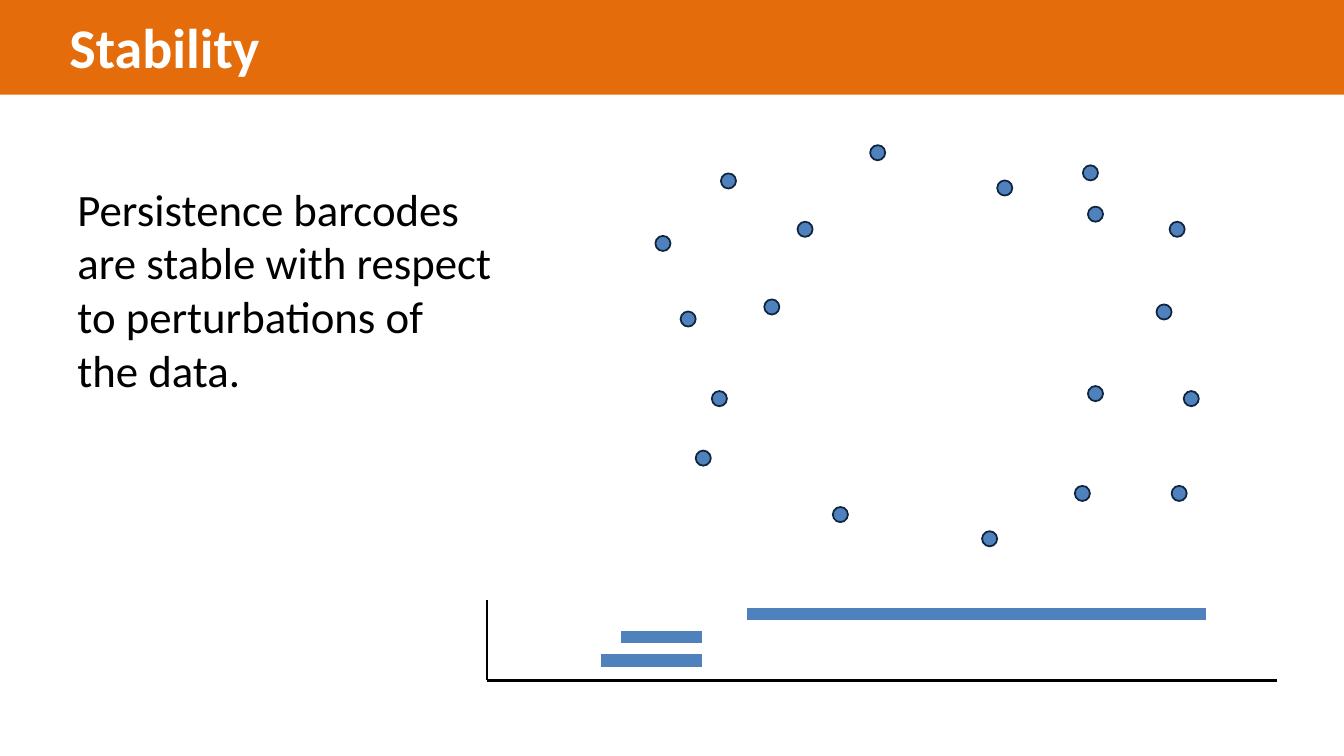
from pptx import Presentation
from pptx import util as u
from pptx.dml.color import RGBColor
from pptx.enum import shapes, text
from pptx.oxml.ns import qn
from lxml import etree

WHITE = RGBColor(0xFF, 0xFF, 0xFF)
BLACK = RGBColor(0x00, 0x00, 0x00)
ORANGE = RGBColor(0xE4, 0x6C, 0x0A)
BLUE = RGBColor(0x4F, 0x81, 0xBD)
NAVY = RGBColor(0x0F, 0x24, 0x3E)

POINT_SIZE = 15
POINTS = [
    (650, 234), (791, 220), (863, 144), (989, 179), (1074, 164),
    (1174, 388), (1066, 482), (974, 527), (826, 503), (690, 447),
    (675, 309), (1079, 383), (706, 388), (1147, 302), (1079, 205),
    (1162, 482), (758, 297), (715, 172), (1160, 220),
]
# Barcode intervals: start, end, row counted upwards from the axis
BARS = [(596, 696, 0), (616, 696, 1), (741, 768, 2), (766, 968, 2), (967, 1196, 2)]
BAR_BASE, BAR_STEP = 655, 23
AXIS_LEFT, AXIS_RIGHT, AXIS_TOP, AXIS_BOTTOM = 483, 1267, 595, 675


def px(n):
    """Convert px to EMU at 100 px to the inch."""
    return u.Emu(n * 9144)


class SlideBuilder:
    font = "Calibri"

    def __init__(self, prs):
        self.s = prs.slides.add_slide(prs.slide_layouts[6])

    def shape(self, kind, x, y, w, h, fill, line=None, weight=1.25):
        sp = self.s.shapes.add_shape(kind, px(x), px(y), px(w), px(h))
        sp.shadow.inherit = False
        sp.fill.solid()
        sp.fill.fore_color.rgb = fill
        if line is None:
            sp.line.fill.background()
        else:
            sp.line.color.rgb = line
            sp.line.width = u.Pt(weight)

    def line(self, x1, y1, x2, y2, color, weight):
        c = self.s.shapes.add_connector(
            shapes.MSO_CONNECTOR.STRAIGHT, px(x1), px(y1), px(x2), px(y2))
        c.line.color.rgb = color
        c.line.width = u.Pt(weight)
        etree.SubElement(c._element.spPr, qn("a:effectLst"))

    def text(self, x, y, w, h, words, size, color, bold=False, wrap=True):
        tf = self.s.shapes.add_textbox(px(x), px(y), px(w), px(h)).text_frame
        tf.word_wrap = wrap
        tf.auto_size = text.MSO_AUTO_SIZE.SHAPE_TO_FIT_TEXT
        p = tf.paragraphs[0]
        p.text = words
        p.font.name = self.font
        p.font.size = u.Pt(size)
        p.font.bold = bold
        p.font.color.rgb = color


def main():
    prs = Presentation()
    prs.slide_width, prs.slide_height = px(1333), px(750)
    b = SlideBuilder(prs)

    for x, y in POINTS:
        b.shape(shapes.MSO_SHAPE.OVAL, x, y, POINT_SIZE, POINT_SIZE, BLUE, NAVY)

    for start, end, row in BARS:
        y = BAR_BASE - row * BAR_STEP
        b.line(start, y, end, y, BLUE, 9)
    b.line(AXIS_LEFT, AXIS_BOTTOM, AXIS_RIGHT, AXIS_BOTTOM, BLACK, 1.75)
    b.line(AXIS_LEFT, AXIS_TOP, AXIS_LEFT, AXIS_BOTTOM, BLACK, 1.75)

    b.shape(shapes.MSO_SHAPE.RECTANGLE, 0, 0, 1333, 94, ORANGE)
    b.text(59, 8, 211, 77, "Stability", 40, WHITE, bold=True, wrap=False)
    b.text(67, 175, 433, 226,
           "Persistence barcodes are stable with respect to perturbations of the data.",
           32, BLACK)

    prs.save("out.pptx")


if __name__ == "__main__":
    main()
